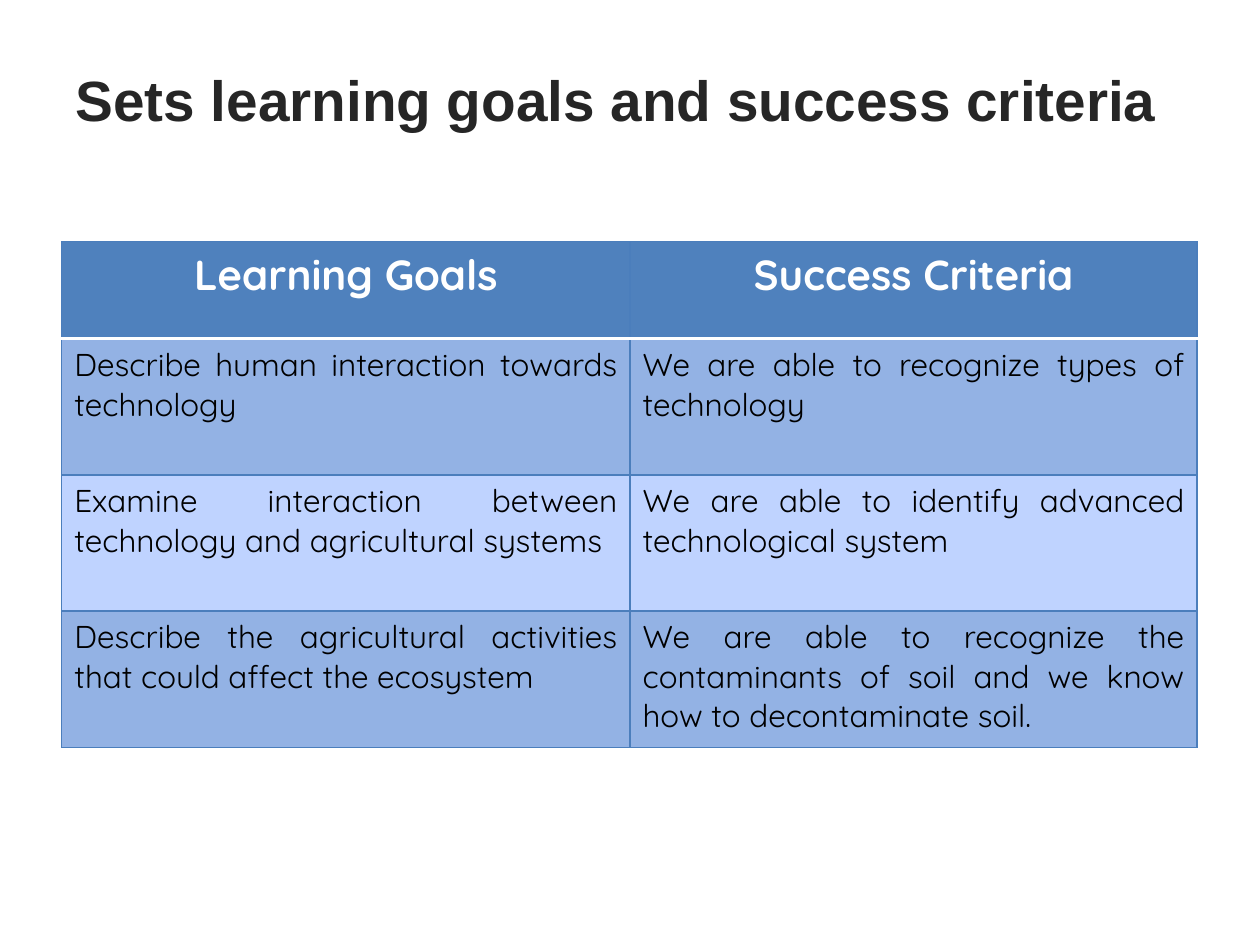
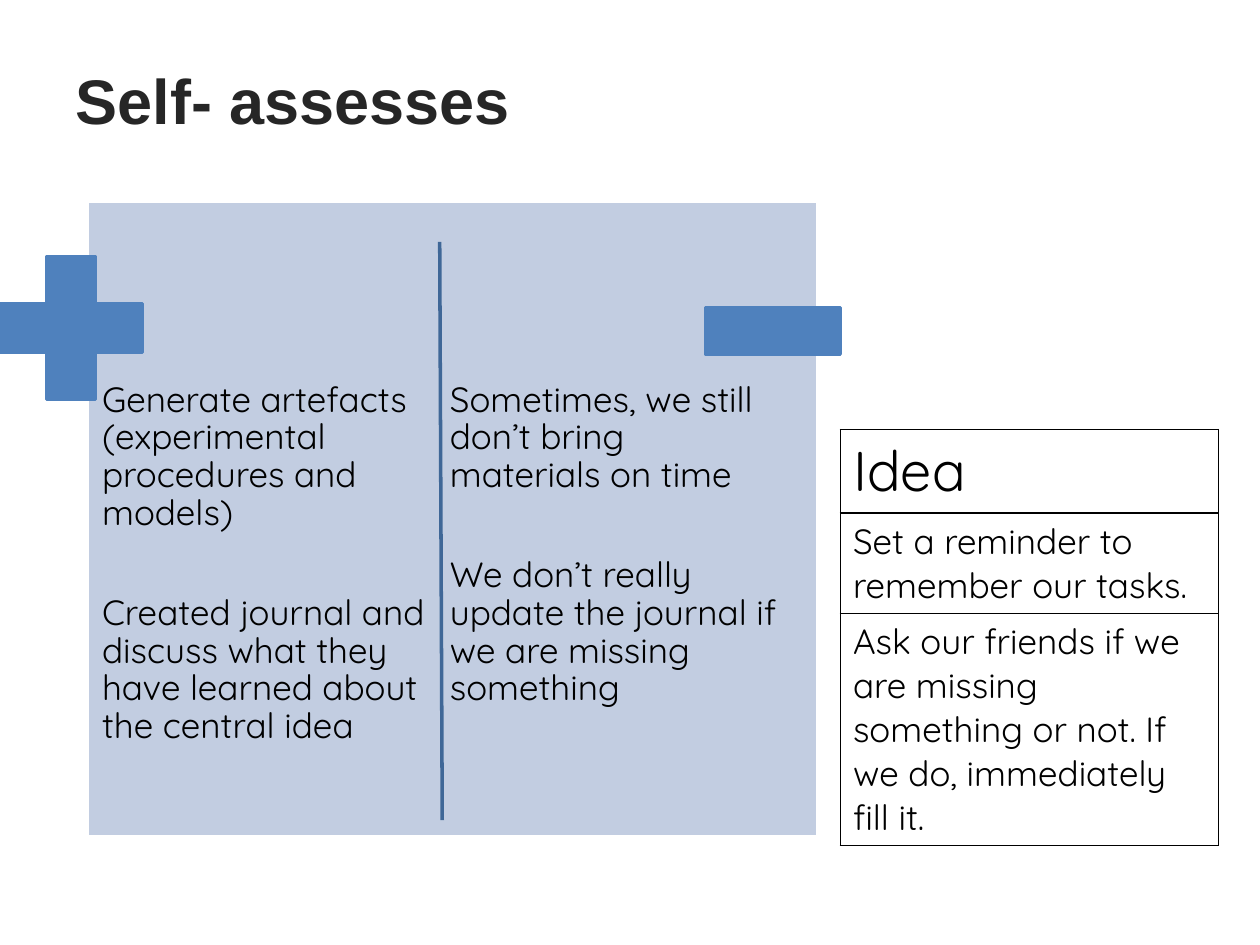
import pptx
import pptx.util
import pptx.dml.color
import pptx.enum.shapes
import pptx.enum.text
import pptx.oxml.ns
from lxml import etree

Inches, Pt = pptx.util.Inches, pptx.util.Pt
ALIGN = pptx.enum.text.PP_ALIGN
SHAPE = pptx.enum.shapes.MSO_SHAPE
qn = pptx.oxml.ns.qn

HEAD_FONT, BODY_FONT = "Arial", "Quicksand"
BLUE, GRID, DIVIDER, PANEL = "4F81BD", "4B7EBC", "3F6797", "C2CDE1"
BAND_DARK, BAND_LIGHT = "93B2E4", "BFD3FF"
BLACK, WHITE, TITLE_INK = "000000", "FFFFFF", "262626"

GOALS = [
    ("Learning Goals", "Success Criteria"),
    ("Describe human interaction towards technology",
     "We are able to recognize types of technology"),
    ("Examine interaction between technology and agricultural systems",
     "We are able to identify advanced technological system"),
    ("Describe the agricultural activities that could affect the ecosystem",
     "We are able to recognize the contaminants of soil and we know how to "
     "decontaminate soil."),
]
STRENGTHS = [
    "Generate artefacts (experimental procedures and models)",
    "Created journal and discuss what they have learned about the central idea",
]
WEAKNESSES = [
    "Sometimes, we still don’t bring materials on time",
    "We don’t really update the journal if we are missing something",
]
IDEAS = [
    "Idea",
    "Set a reminder to remember our tasks.",
    "Ask our friends if we are missing something or not. If we do, immediately "
    "fill it.",
]


def rgb(color):
    return pptx.dml.color.RGBColor.from_string(color)


def box(x, y, w, h):
    return [Inches(v) for v in (x, y, w, h)]


def style(p, size, color=BLACK, name=BODY_FONT, bold=False, align=ALIGN.LEFT):
    p.alignment = align
    f = p.font
    f.name, f.size, f.bold = name, Pt(size), bold
    f.color.rgb = rgb(color)


def add_titled_slide(prs, title, size):
    s = prs.slides.add_slide(prs.slide_layouts[5])
    sp = s.shapes.title
    sp.left, sp.top, sp.width, sp.height = box(0.5, 0.16, 9, 1.25)
    tf = sp.text_frame
    tf.text = title
    tf.auto_size = pptx.enum.text.MSO_AUTO_SIZE.NONE
    tf.vertical_anchor = pptx.enum.text.MSO_ANCHOR.MIDDLE
    style(tf.paragraphs[0], size, TITLE_INK, HEAD_FONT, True)
    return s


def set_borders(cell, **sides):
    """Draw cell borders; each of L, R, T, B is a (colour, points) pair."""
    tcPr = cell._tc.get_or_add_tcPr()
    for side in "LRTB":
        color, width = sides[side]
        ln = etree.SubElement(tcPr, qn(f"a:ln{side}"), w=str(int(Pt(width))))
        fill = etree.SubElement(ln, qn("a:solidFill"))
        etree.SubElement(fill, qn("a:srgbClr"), val=color)


def add_table(s, x, y, widths, heights):
    table = s.shapes.add_table(
        len(heights), len(widths), *box(x, y, sum(widths), sum(heights))).table
    table.horz_banding = False
    for col, w in zip(table.columns, widths):
        col.width = Inches(w)
    for row, h in zip(table.rows, heights):
        row.height = Inches(h)
    return table


def add_goals_table(s, x, y):
    table = add_table(s, x, y, [4.51, 4.5], [0.77] + [1.08] * 3)
    line, header_rule = (GRID, 0.75), (WHITE, 2)
    for i, texts in enumerate(GOALS):
        for j, text in enumerate(texts):
            cell = table.cell(i, j)
            cell.text = text
            set_borders(cell, L=line, R=line,
                        T=header_rule if i == 1 else line,
                        B=header_rule if i == 0 else line)
            cell.fill.solid()
            p = cell.text_frame.paragraphs[0]
            if i == 0:
                cell.fill.fore_color.rgb = rgb(BLUE)
                style(p, 24, WHITE, bold=True, align=ALIGN.CENTER)
            else:
                cell.fill.fore_color.rgb = rgb(BAND_DARK if i % 2 else BAND_LIGHT)
                style(p, 18, align=ALIGN.JUSTIFY)


def add_ideas_table(s, x, y):
    table = add_table(s, x, y, [3], [0.66, 0.8, 1.84])
    line = (BLACK, 1)
    for i, text in enumerate(IDEAS):
        cell = table.cell(i, 0)
        cell.text = text
        set_borders(cell, L=line, R=line, T=line, B=line)
        cell.fill.background()
        style(cell.text_frame.paragraphs[0], 20 if i else 32)


def add_block(s, kind, x, y, w, h, fill, line):
    sp = s.shapes.add_shape(kind, *box(x, y, w, h))
    sp.shadow.inherit = False
    sp.fill.solid()
    sp.fill.fore_color.rgb = rgb(fill)
    sp.line.color.rgb = rgb(line)
    sp.line.width = Pt(2)
    return sp


def add_points(s, x, y, w, h, points):
    tf = s.shapes.add_textbox(*box(x, y, w, h)).text_frame
    tf.word_wrap = True
    tf.margin_left = tf.margin_right = tf.margin_top = tf.margin_bottom = Inches(0.04)
    for i, point in enumerate(points):
        p = tf.add_paragraph() if i else tf.paragraphs[0]
        p.text = point
        p.line_spacing = 0.9
        if i:
            p.space_before = Pt(35.5)
        style(p, 20)


def add_divider(s, x1, y1, x2, y2):
    c = s.shapes.add_connector(
        pptx.enum.shapes.MSO_CONNECTOR.STRAIGHT, *box(x1, y1, x2, y2))
    c.line.color.rgb = rgb(DIVIDER)
    c.line.width = Pt(2)
    etree.SubElement(c._element.spPr, qn("a:effectLst"))


def add_plus_minus_panel(s, x, y, w, h):
    """Two columns of points on a panel, marked with a plus and a minus."""
    add_block(s, SHAPE.RECTANGLE, x, y, w, h, PANEL, WHITE)
    for dx, points in ((0.08, STRENGTHS), (2.84, WEAKNESSES)):
        add_points(s, x + dx, y + 1.39, 2.69, 2.56, points)
    plus = add_block(s, SHAPE.CROSS, x - 0.69, y + 0.44, 1.13, 1.13, BLUE, BLUE)
    plus.adjustments[0] = 0.328
    add_block(s, SHAPE.RECTANGLE, x + w - 0.89, y + 0.84, 1.07, 0.37, BLUE, BLUE)
    add_divider(s, x + 2.8, y + 0.32, x + 2.82, y + h - 0.13)


def main():
    prs = pptx.Presentation()
    prs.slide_width, prs.slide_height = Inches(10), Inches(7.5)

    s = add_titled_slide(prs, "Sets learning goals and success criteria", 32.4)
    add_goals_table(s, 0.49, 1.92)

    s = add_titled_slide(prs, "Self- assesses", 36)
    add_ideas_table(s, 6.67, 3.41)
    add_plus_minus_panel(s, 0.69, 1.6, 5.8, 5.04)

    prs.save("out.pptx")


if __name__ == "__main__":
    main()
